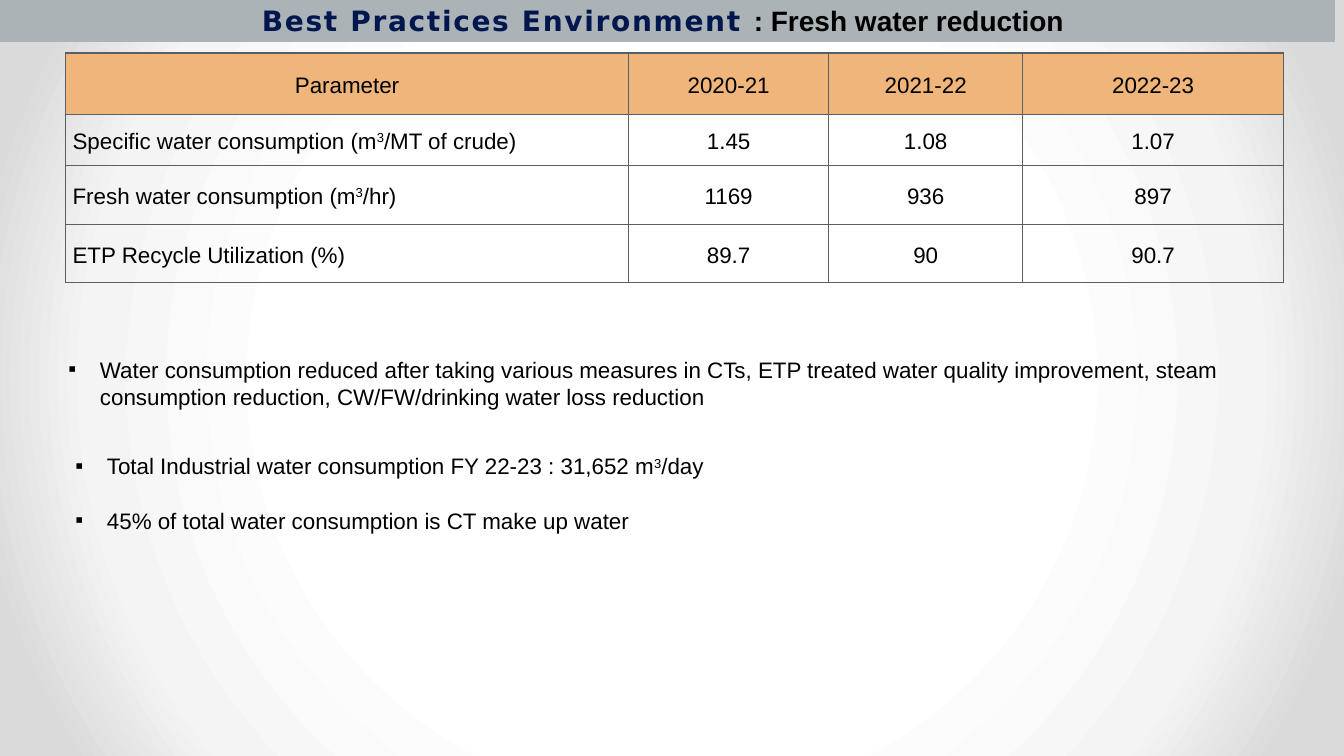
"""Build the fresh water reduction slide with its table and findings."""
from dataclasses import dataclass

from lxml import etree
from pptx import Presentation
from pptx.dml.color import RGBColor
from pptx.enum.text import MSO_ANCHOR, MSO_AUTO_SIZE, PP_ALIGN
from pptx.oxml import parse_xml
from pptx.oxml.ns import qn
from pptx.util import Pt

LEFT, CENTER = PP_ALIGN.LEFT, PP_ALIGN.CENTER
MIDDLE = MSO_ANCHOR.MIDDLE
FIXED_SIZE = MSO_AUTO_SIZE.NONE

TITLE = ("Best Practices Environment ", ": Fresh water reduction")
TABLE_ROWS = [
    ("Parameter", "2020-21", "2021-22", "2022-23"),
    ("Specific water consumption (m^3^/MT of crude)", "1.45", "1.08", "1.07"),
    ("Fresh water consumption (m^3^/hr)", "1169", "936", "897"),
    ("ETP Recycle Utilization (%)", "89.7", "90", "90.7"),
]
FINDINGS = [
    ((41.8, 250.6, 853.2, 46), [
        "Water consumption reduced after taking various measures in CTs, "
        "ETP treated water quality improvement, steam consumption reduction, "
        "CW/FW/drinking water loss reduction",
    ]),
    ((46.8, 319.7, 548, 67.7), [
        "Total Industrial water consumption FY 22-23 : 31,652 m^3^/day",
        "45% of total water consumption is CT make up water",
    ]),
]

SLIDE_SIZE = (960, 540)
TITLE_AREA = (-6.5, -1.5, 960, 31.5)
TABLE_ORIGIN = (46.8, 37.9)
COLUMN_WIDTHS = (402.2, 143, 138.5, 186.4)
ROW_HEIGHTS = (43.7, 36.9, 41.8, 41.8)
CELL_INSET = 5.1
BULLET_INDENT = 22.5
FINDING_GAP = 19.5
BACKGROUND_STOPS = ((50, "FFFFFF"), (76, "F4F4F4"), (92, "DADADA"))


@dataclass(frozen=True)
class Theme:
    """Colours, fonts and type sizes of the slide."""
    bar: str = "ACB3B6"
    navy: str = "00164E"
    ink: str = "000000"
    header: str = "F0B57A"
    rule: str = "586064"
    title_font: str = "DejaVu Sans"
    body_font: str = "Arial"
    title_size: int = 20
    body_size: int = 16


THEME = Theme()


def points(values):
    """Convert numbers to lengths."""
    return [Pt(value) for value in values]


def style_span(span, font, size, color, bold=False):
    """Format one run."""
    span.font.name = font
    span.font.size = Pt(size)
    span.font.bold = bold
    span.font.color.rgb = RGBColor.from_string(color)


def write_body(para, text):
    """Write body text in which carets enclose superscripts."""
    for index, part in enumerate(text.split("^")):
        span = para.add_run()
        span.text = part
        style_span(span, THEME.body_font, THEME.body_size, THEME.ink)
        if index % 2:
            span.font._element.set("baseline", "30000")


def paint_background(page):
    """Give the page a radial gradient."""
    stops = "".join(
        f'<a:gs pos="{position * 1000}"><a:srgbClr val="{color}"/></a:gs>'
        for position, color in BACKGROUND_STOPS)
    background = parse_xml(
        '<p:bg xmlns:p="http://schemas.openxmlformats.org/presentationml/2006/main" '
        'xmlns:a="http://schemas.openxmlformats.org/drawingml/2006/main">'
        f'<p:bgPr><a:gradFill rotWithShape="1"><a:gsLst>{stops}</a:gsLst>'
        '<a:path path="circle"><a:fillToRect l="50000" t="50000" r="50000" b="50000"/>'
        '</a:path></a:gradFill><a:effectLst/></p:bgPr></p:bg>')
    page._element.cSld.insert(0, background)


def add_title(page):
    """Fill the title bar."""
    title = page.shapes.title
    title.left, title.top, title.width, title.height = points(TITLE_AREA)
    title.fill.solid()
    title.fill.fore_color.rgb = RGBColor.from_string(THEME.bar)
    frame = title.text_frame
    frame.auto_size = FIXED_SIZE
    frame.vertical_anchor = MIDDLE
    para = frame.paragraphs[0]
    para.alignment = CENTER
    looks = ((THEME.title_font, THEME.navy, "120"), (THEME.body_font, THEME.ink, "0"))
    for text, (font, color, spacing) in zip(TITLE, looks):
        span = para.add_run()
        span.text = text
        style_span(span, font, THEME.title_size, color, bold=True)
        span.font._element.set("spc", spacing)


def add_borders(cell):
    """Rule all four sides of a cell."""
    properties = cell._tc.get_or_add_tcPr()
    for side in ("lnL", "lnR", "lnT", "lnB"):
        line = etree.SubElement(properties, qn(f"a:{side}"), w=str(Pt(1)))
        fill = etree.SubElement(line, qn("a:solidFill"))
        etree.SubElement(fill, qn("a:srgbClr"), val=THEME.rule)


def add_water_table(page):
    """Add the table of yearly values."""
    size = (sum(COLUMN_WIDTHS), sum(ROW_HEIGHTS))
    table = page.shapes.add_table(
        len(ROW_HEIGHTS), len(COLUMN_WIDTHS), *points(TABLE_ORIGIN + size)).table
    table.first_row = table.horz_banding = False
    for column, width in zip(table.columns, COLUMN_WIDTHS):
        column.width = Pt(width)
    for row_index, (values, height) in enumerate(zip(TABLE_ROWS, ROW_HEIGHTS)):
        table.rows[row_index].height = Pt(height)
        for column_index, value in enumerate(values):
            cell = table.cell(row_index, column_index)
            cell.margin_left = cell.margin_right = Pt(CELL_INSET)
            cell.margin_top = cell.margin_bottom = 0
            cell.vertical_anchor = MIDDLE
            add_borders(cell)
            if row_index == 0:
                cell.fill.solid()
                cell.fill.fore_color.rgb = RGBColor.from_string(THEME.header)
            else:
                cell.fill.background()
            para = cell.text_frame.paragraphs[0]
            para.alignment = LEFT if row_index and not column_index else CENTER
            para.line_spacing = 1.15
            write_body(para, value)


def add_findings(page, area, findings):
    """Add one box of bulleted findings."""
    frame = page.shapes.add_textbox(*points(area)).text_frame
    frame.word_wrap = True
    for index, finding in enumerate(findings):
        para = frame.add_paragraph() if index else frame.paragraphs[0]
        if index:
            para.space_before = Pt(FINDING_GAP)
        properties = para._p.get_or_add_pPr()
        properties.set("marL", str(Pt(BULLET_INDENT)))
        properties.set("indent", str(-Pt(BULLET_INDENT)))
        etree.SubElement(properties, qn("a:buFont"), typeface=THEME.body_font)
        etree.SubElement(properties, qn("a:buChar"), char="▪")
        write_body(para, finding)


def main():
    """Assemble and save the deck."""
    deck = Presentation()
    deck.slide_width, deck.slide_height = points(SLIDE_SIZE)
    page = deck.slides.add_slide(deck.slide_layouts.get_by_name("Title Only"))
    paint_background(page)
    add_title(page)
    add_water_table(page)
    for area, findings in FINDINGS:
        add_findings(page, area, findings)
    deck.save("out.pptx")


if __name__ == "__main__":
    main()
